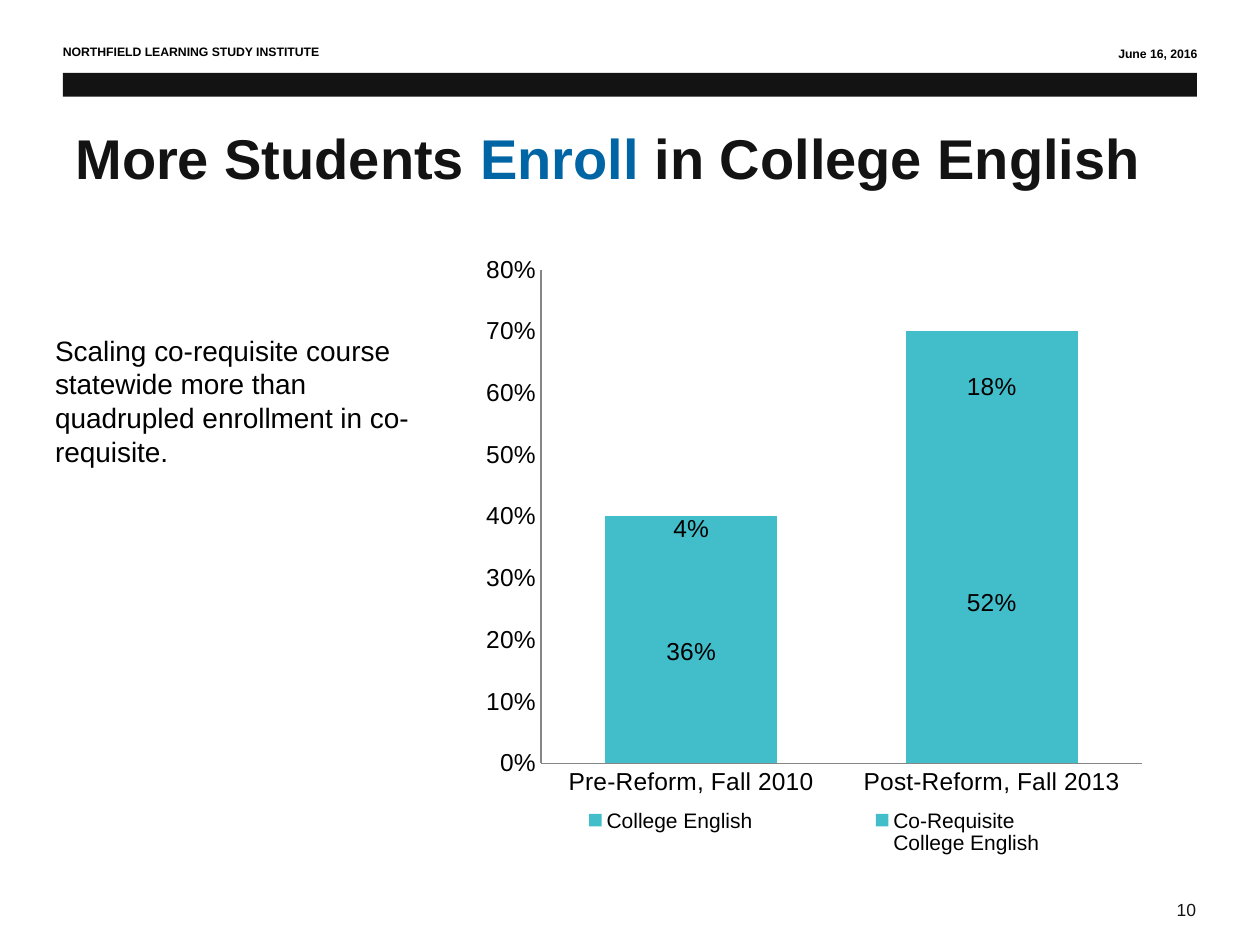
from lxml import etree
from pptx import Presentation
from pptx.chart.data import CategoryChartData
from pptx.dml.color import RGBColor
from pptx.enum.chart import XL_CHART_TYPE, XL_LEGEND_POSITION, XL_TICK_MARK
from pptx.enum.shapes import MSO_SHAPE
from pptx.enum.text import MSO_ANCHOR, PP_ALIGN
from pptx.oxml.ns import qn
from pptx.util import Cm, Pt

STACKED = XL_CHART_TYPE.COLUMN_STACKED
BOTTOM = XL_LEGEND_POSITION.BOTTOM
NO_TICK = XL_TICK_MARK.NONE
RECTANGLE = MSO_SHAPE.RECTANGLE
TOP, MIDDLE = MSO_ANCHOR.TOP, MSO_ANCHOR.MIDDLE
LEFT, RIGHT = PP_ALIGN.LEFT, PP_ALIGN.RIGHT
COLORS = {"ink": "141313", "black": "000000", "blue": "0065A4",
          "teal": "42BECA", "axis": "868686"}


class SlideBuilder:
    """Hold the style and the current slide, and draw each kind of element."""

    def __init__(self, slide, font="Arial"):
        self.slide = slide
        self.font = font

    def color(self, name):
        return RGBColor.from_string(COLORS[name])

    def style(self, font, size, color="black", bold=False):
        font.name = self.font
        font.size = Pt(size)
        font.bold = bold
        font.color.rgb = self.color(color)

    def text(self, spans, place, size, color="black", bold=False,
             align=LEFT, anchor=TOP, inset=0.13):
        box = self.slide.shapes.add_textbox(*map(Cm, place))
        frame = box.text_frame
        frame.word_wrap = True
        frame.vertical_anchor = anchor
        frame.margin_top = Cm(inset)
        para = frame.paragraphs[0]
        para.alignment = align
        self.style(para.font, size, color, bold)
        for words, accent in spans:
            span = para.add_run()
            span.text = words
            if accent:
                span.font.color.rgb = self.color(accent)

    def bar(self, place, color):
        shape = self.slide.shapes.add_shape(RECTANGLE, *map(Cm, place))
        shape.shadow.inherit = False
        shape.fill.solid()
        shape.fill.fore_color.rgb = self.color(color)
        shape.line.fill.background()

    def chart(self, categories, series, place, plot_area, legend_area):
        data = CategoryChartData(number_format="0%")
        data.categories = categories
        for name, values in series.items():
            data.add_series(name, values)
        chart = self.slide.shapes.add_chart(STACKED, *map(Cm, place), data).chart
        self.style(chart.font, 14)
        chart.has_title = False
        chart.has_legend = True
        chart.legend.position = BOTTOM
        chart.legend.include_in_layout = False
        self.style(chart.legend.font, 12)
        for axis in (chart.category_axis, chart.value_axis):
            axis.major_tick_mark = axis.minor_tick_mark = NO_TICK
            axis.has_major_gridlines = False
            axis.format.line.color.rgb = self.color("axis")
        scale = chart.value_axis
        scale.minimum_scale, scale.maximum_scale, scale.major_unit = 0, 0.8, 0.1
        scale.tick_labels.number_format = "0%"
        scale.tick_labels.number_format_is_linked = False
        plot = chart.plots[0]
        plot.gap_width, plot.overlap = 75, 100
        plot.vary_by_categories = False
        for column in plot.series:
            column.format.fill.solid()
            column.format.fill.fore_color.rgb = self.color("teal")
            labels = column.data_labels
            labels.show_value = True
            labels.number_format = "0%"
            labels.number_format_is_linked = False
        self.place_part(chart, "plotArea", 0, plot_area, layoutTarget="inner")
        self.place_part(chart, "legend", 1, legend_area)

    def place_part(self, chart, part, index, area, **settings):
        parent = next(chart.element.iter(qn(f"c:{part}")))
        for old in parent.findall(qn("c:layout")):
            parent.remove(old)
        layout = etree.Element(qn("c:layout"))
        parent.insert(index, layout)
        manual = etree.SubElement(layout, qn("c:manualLayout"))
        settings.update(xMode="edge", yMode="edge")
        settings.update(zip("xywh", area))
        for tag, value in settings.items():
            etree.SubElement(manual, qn(f"c:{tag}")).set("val", str(value))


def main():
    deck = Presentation()
    deck.slide_width, deck.slide_height = Cm(25.4), Cm(19.05)
    page = SlideBuilder(deck.slides.add_slide(deck.slide_layouts[6]))
    page.text([("10", None)], (23.47, 18, 1.17, 0.69), 10, "ink")
    page.bar((1.27, 1.47, 22.86, 0.48), "ink")
    page.text([("June 16, 2016", None)], (16.31, 0.81, 8.08, 0.56), 7,
              bold=True, align=RIGHT)
    page.text([("NORTHFIELD LEARNING STUDY INSTITUTE", None)],
              (1.02, 0.77, 9.04, 0.56), 7, bold=True)
    page.text([("More Students ", None), ("Enroll", "blue"),
               (" in College English", None)],
              (1.27, 1.27, 23.7, 3.81), 32, "ink", bold=True, anchor=MIDDLE)
    page.text([("Scaling co-requisite course statewide more than quadrupled "
                "enrollment in co-requisite.", None)],
              (0.86, 5.92, 8.46, 3.68), 16, inset=0.8)
    page.chart(("Pre-Reform, Fall 2010", "Post-Reform, Fall 2013"),
               {"College English": (0.36, 0.52),
                "Co-Requisite \nCollege English": (0.04, 0.18)},
               (9.53, 4.93, 13.77, 12.6), (0.1, 0.04, 0.88, 0.79),
               (0, 0.89, 1, 0.1))
    deck.save("out.pptx")


if __name__ == "__main__":
    main()
